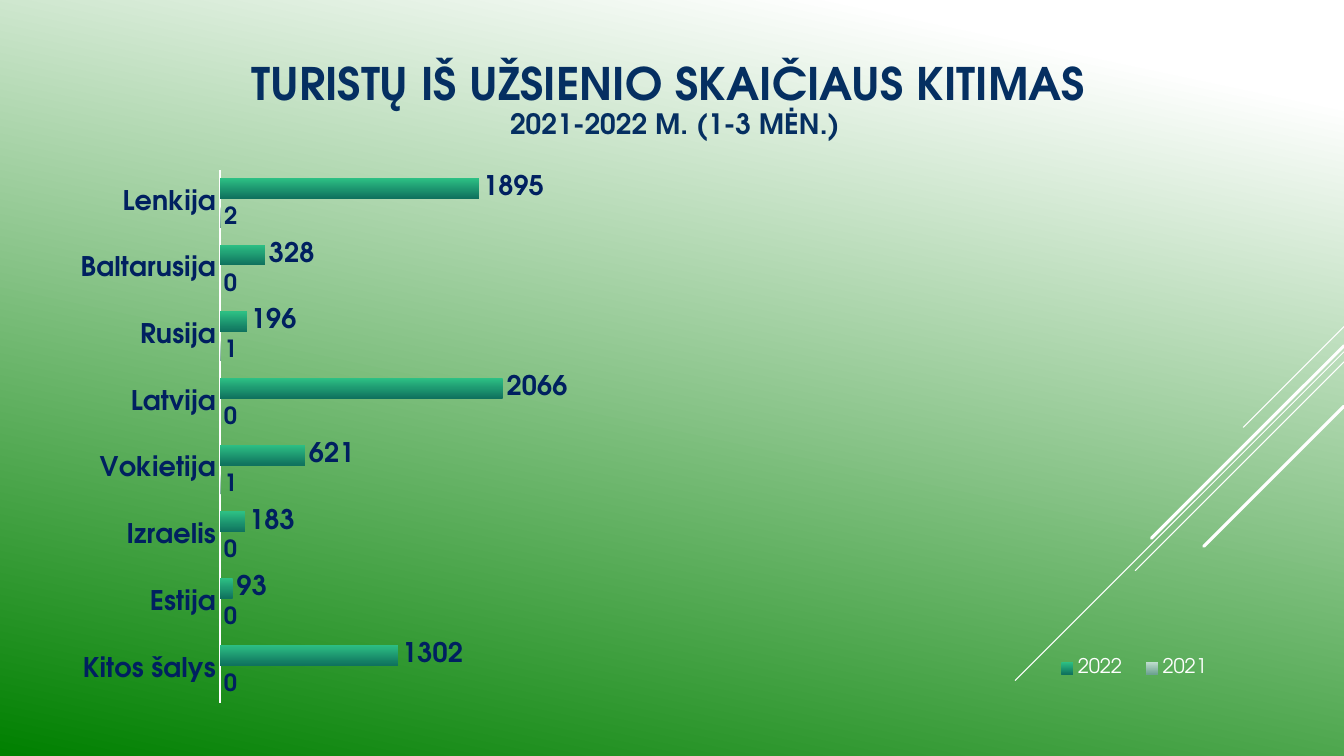
from dataclasses import dataclass

from lxml import etree
from pptx import Presentation
from pptx.chart.data import CategoryChartData
from pptx.dml.color import RGBColor
from pptx.enum.chart import XL_CHART_TYPE as ChartType
from pptx.enum.chart import XL_LABEL_POSITION as LabelPos
from pptx.enum.chart import XL_LEGEND_POSITION as LegendPos
from pptx.enum.chart import XL_TICK_LABEL_POSITION as TickLabels
from pptx.enum.chart import XL_TICK_MARK as Tick
from pptx.enum.shapes import MSO_CONNECTOR as Connector
from pptx.enum.text import MSO_ANCHOR as Anchor
from pptx.enum.text import PP_ALIGN as Align
from pptx.oxml.ns import qn
from pptx.util import Inches, Pt

WIDTH, HEIGHT = 13.33, 7.5


@dataclass(frozen=True)
class Theme:
    font: str = "TeX Gyre Adventor"
    white: str = "FFFFFF"
    title: str = "052F61"
    label: str = "002060"
    backdrop: tuple = ((0, "FFFFFF"), (10, "FFFFFF"), (100, "008000"))
    bars_2021: tuple = ((0, "BFDDCF"), (100, "6DA291"))
    bars_2022: tuple = ((0, "2DC084"), (100, "0F725E"))
    title_size: float = 32
    subtitle_size: float = 20
    category_size: float = 19.3
    small_label_size: float = 16.9
    legend_size: float = 14.4
    base_size: float = 10


THEME = Theme()

# Country: (2021, 2022), from the bottom of the chart upwards
TOURISTS = {
    "Kitos šalys": (0, 1302),
    "Estija": (0, 93),
    "Izraelis": (0, 183),
    "Vokietija": (1, 621),
    "Latvija": (0, 2066),
    "Rusija": (1, 196),
    "Baltarusija": (0, 328),
    "Lenkija": (2, 1895),
}

# Diagonals from the right edge: start height, run to the left, weight
DIAGONALS = (
    (3.24, 1.0, 0.75),
    (3.49, 3.26, 0.75),
    (3.59, 2.07, 0.75),
    (3.43, 1.91, 2.25),
    (4.03, 1.39, 2.25),
)


def box(left, top, width, height):
    """Turn shares of the slide into lengths."""
    return (Inches(left * WIDTH), Inches(top * HEIGHT),
            Inches(width * WIDTH), Inches(height * HEIGHT))


def set_font(font, size, color, bold=False):
    font.name = THEME.font
    font.size = Pt(size)
    font.bold = bold
    font.color.rgb = RGBColor.from_string(color)


def set_gradient(fill, owner, stops, angle):
    """Replace the owner's solid fill with a linear gradient."""
    fill.solid()
    solid = next(owner.iter(qn("a:solidFill")))
    grad = etree.Element(qn("a:gradFill"), rotWithShape="1")
    stop_list = etree.SubElement(grad, qn("a:gsLst"))
    for share, color in stops:
        gs = etree.SubElement(stop_list, qn("a:gs"), pos=str(share * 1000))
        etree.SubElement(gs, qn("a:srgbClr"), val=color)
    etree.SubElement(grad, qn("a:lin"), ang=str(angle * 60000), scaled="0")
    solid.getparent().replace(solid, grad)


def set_layout(owner, index, inner, **shares):
    """Place a part of the chart by shares of the chart's size."""
    for old in owner.findall(qn("c:layout")):
        owner.remove(old)
    layout = etree.Element(qn("c:layout"))
    manual = etree.SubElement(layout, qn("c:manualLayout"))
    if inner:
        etree.SubElement(manual, qn("c:layoutTarget"), val="inner")
    for mode in ("xMode", "yMode"):
        etree.SubElement(manual, qn(f"c:{mode}"), val="edge")
    for name, share in shares.items():
        etree.SubElement(manual, qn(f"c:{name}"), val=str(share))
    owner.insert(index, layout)


def add_diagonal(slide, top, run, weight):
    line = slide.shapes.add_connector(
        Connector.STRAIGHT, Inches(WIDTH), Inches(top),
        Inches(WIDTH - run), Inches(top + run))
    line.line.color.rgb = RGBColor.from_string(THEME.white)
    line.line.width = Pt(weight)
    props = line._element.spPr
    props.find(qn("a:ln")).set("cap", "rnd")
    etree.SubElement(props, qn("a:effectLst"))


def add_title(slide, title, subtitle):
    tf = slide.shapes.add_textbox(*box(0.0255, 0.055, 0.9535, 0.157)).text_frame
    tf.word_wrap = True
    tf.vertical_anchor = Anchor.MIDDLE
    p = tf.paragraphs[0]
    p.alignment = Align.CENTER
    p.line_spacing = 0.9
    r = p.add_run()
    r.text = title
    set_font(r.font, THEME.title_size, THEME.title, True)
    p.add_line_break()
    r = p.add_run()
    r.text = subtitle
    set_font(r.font, THEME.subtitle_size, THEME.title, True)


def style_series(series, stops, label_size):
    set_gradient(series.format.fill, series._element, stops, 90)
    labels = series.data_labels
    labels.show_value = True
    labels.position = LabelPos.OUTSIDE_END
    set_font(labels.font, label_size, THEME.label, True)


def style_axes(chart):
    cats = chart.category_axis
    cats.major_tick_mark = cats.minor_tick_mark = Tick.NONE
    cats.format.line.color.rgb = RGBColor.from_string(THEME.white)
    cats.format.line.width = Pt(1.21)
    set_font(cats.tick_labels.font, THEME.category_size, THEME.label, True)
    vals = chart.value_axis
    vals.minimum_scale, vals.maximum_scale = 0, 7300
    vals.has_major_gridlines = False
    vals.tick_label_position = TickLabels.NONE
    vals.format.line.fill.background()


def add_tourist_chart(slide):
    data = CategoryChartData()
    data.categories = list(TOURISTS)
    for year, values in zip(("2021", "2022"), zip(*TOURISTS.values())):
        data.add_series(year, values)
    chart = slide.shapes.add_chart(
        ChartType.BAR_CLUSTERED, *box(0.025, 0.195, 0.895, 0.792), data).chart
    chart.has_title = False
    set_font(chart.font, THEME.base_size, THEME.white)
    style_axes(chart)

    # Bars
    plot = chart.plots[0]
    plot.gap_width, plot.overlap = 85, -45
    plot.vary_by_categories = False
    s2021, s2022 = plot.series
    style_series(s2021, THEME.bars_2021, THEME.small_label_size)
    style_series(s2022, THEME.bars_2022, THEME.category_size)
    area = next(chart.element.iter(qn("c:plotArea")))
    set_layout(area, 0, True, x=0.155, y=0.037, w=0.83, h=0.891)

    # Legend
    chart.has_legend = True
    legend = chart.legend
    legend.position = LegendPos.RIGHT
    legend.include_in_layout = False
    set_font(legend.font, THEME.legend_size, THEME.white)
    set_layout(legend._element, 1, False, x=0.84, y=0.84, w=0.15, h=0.06)


def main():
    prs = Presentation()
    prs.slide_width, prs.slide_height = Inches(WIDTH), Inches(HEIGHT)
    slide = prs.slides.add_slide(prs.slide_layouts[6])
    set_gradient(slide.background.fill, slide.element, THEME.backdrop, 102)
    for diagonal in DIAGONALS:
        add_diagonal(slide, *diagonal)
    add_title(slide, "TURISTŲ IŠ UŽSIENIO SKAIČIAUS KITIMAS ",
              "2021-2022 M. (1-3 MĖN.)")
    add_tourist_chart(slide)
    prs.save("out.pptx")


if __name__ == "__main__":
    main()
